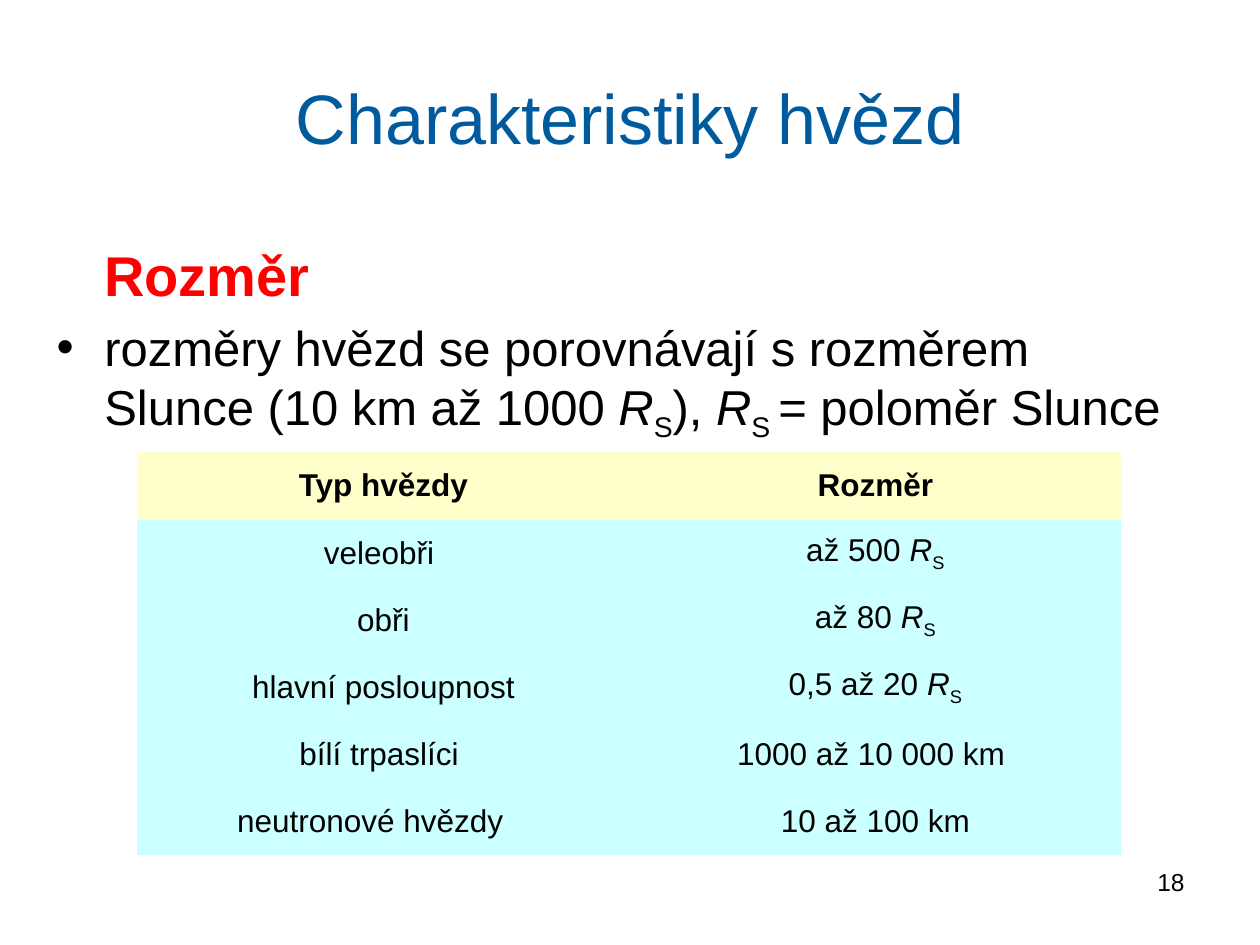
"""Build the slide on star sizes: title, bulleted text and a table."""
from dataclasses import dataclass

from lxml import etree
from pptx import Presentation
from pptx import util as u
from pptx.dml.color import RGBColor
from pptx.enum import text
from pptx.oxml import ns

FONT = "Arial"
COLORS = {
    "title": "005A9E",
    "heading": "FF0000",
    "body": "000000",
    "header_row": "FFFFCC",
    "data_row": "CCFFFF",
}
NO_STYLE = "{2D5ABB26-0587-4C30-8999-92F81FD0307C}"
NBSP_WIDTH = 0.07
CELL_MARGIN = 0.05
HANGING = 0.38


@dataclass(frozen=True)
class StarType:
    name: str
    size: str
    in_solar_radii: bool = False
    name_shift: int = 0
    size_shift: int = 0


STAR_TYPES = [
    StarType("veleobři", "až 500 ", in_solar_radii=True, name_shift=1),
    StarType("obři", "až 80 ", in_solar_radii=True),
    StarType("hlavní posloupnost", "0,5 až 20 ", in_solar_radii=True),
    StarType("bílí trpaslíci", "1000 až 10 000 km", name_shift=1, size_shift=1),
    StarType("neutronové hvězdy", "10 až 100 km", name_shift=3),
]


def add_span(para, content: str, *, size: float, color: str = "body", bold: bool = False,
             italic: bool = False, subscript: bool = False) -> None:
    """Append formatted text to a paragraph."""
    span = para.add_run()
    span.text = content
    font = span.font
    font.name, font.size = FONT, u.Pt(size)
    font.bold, font.italic = bold, italic
    font.color.rgb = RGBColor.from_string(COLORS[color])
    if subscript:
        span._r.get_or_add_rPr().set("baseline", "-25000")


def add_solar_radius(para, size: float, tail: str = "") -> None:
    """Append the symbol of the solar radius."""
    add_span(para, "R", size=size, italic=True)
    add_span(para, "S" + tail, size=size, subscript=True)


def add_box(page, left: float, top: float, width: float, height: float,
            anchor=text.MSO_ANCHOR.TOP, align=text.PP_ALIGN.LEFT):
    """Add a wrapping text box and return its text frame."""
    box = page.shapes.add_textbox(u.Inches(left), u.Inches(top), u.Inches(width), u.Inches(height))
    frame = box.text_frame
    frame.word_wrap = True
    frame.vertical_anchor = anchor
    frame.paragraphs[0].alignment = align
    return frame


def set_indent(para, first_line: float, bullet: str = "") -> None:
    """Indent a paragraph and give it an optional bullet."""
    properties = para._p.get_or_add_pPr()
    properties.set("marL", str(u.Inches(HANGING)))
    properties.set("indent", str(u.Inches(first_line)))
    if bullet:
        etree.SubElement(properties, ns.qn("a:buFont")).set("typeface", FONT)
        etree.SubElement(properties, ns.qn("a:buChar")).set("char", bullet)


def format_cell(cell, fill: str, shift: int = 0):
    """Fill and centre a cell, and return its paragraph."""
    cell.fill.solid()
    cell.fill.fore_color.rgb = RGBColor.from_string(COLORS[fill])
    cell.vertical_anchor = text.MSO_ANCHOR.MIDDLE
    cell.margin_left = cell.margin_top = cell.margin_bottom = u.Inches(CELL_MARGIN)
    cell.margin_right = u.Inches(CELL_MARGIN + shift * NBSP_WIDTH)
    para = cell.text_frame.paragraphs[0]
    para.alignment = text.PP_ALIGN.CENTER
    return para


def add_body(page) -> None:
    """Add the heading and the bulleted sentence."""
    frame = add_box(page, 0.35, 1.86, 9.11, 1.7)
    heading = frame.paragraphs[0]
    set_indent(heading, 0)
    add_span(heading, "Rozměr", size=32, color="heading", bold=True)
    para = frame.add_paragraph()
    para.space_before = u.Pt(5.6)
    set_indent(para, -HANGING, bullet="•")
    add_span(para, "rozměry hvězd se porovnávají s rozměrem Slunce (10 km až 1000 ", size=28)
    add_solar_radius(para, 28)
    add_span(para, "), ", size=28)
    add_solar_radius(para, 28, tail=" ")
    add_span(para, "= poloměr Slunce", size=28)


def add_star_table(page) -> None:
    """Add the table of star types and sizes."""
    rows = len(STAR_TYPES) + 1
    table = page.shapes.add_table(rows, 2, u.Inches(1.09), u.Inches(3.59),
                                  u.Inches(7.81), u.Inches(3.2)).table
    table.first_row = table.horz_banding = False
    table._tbl.tblPr.find(ns.qn("a:tableStyleId")).text = NO_STYLE
    for column, label in enumerate(("Typ hvězdy", "Rozměr")):
        para = format_cell(table.cell(0, column), "header_row")
        add_span(para, label, size=18, bold=True)
    for row, star in enumerate(STAR_TYPES, start=1):
        name = format_cell(table.cell(row, 0), "data_row", star.name_shift)
        add_span(name, star.name, size=18)
        size = format_cell(table.cell(row, 1), "data_row", star.size_shift)
        add_span(size, star.size, size=18)
        if star.in_solar_radii:
            add_solar_radius(size, 18)


def main() -> None:
    """Create the deck and save it."""
    deck = Presentation()
    deck.slide_width, deck.slide_height = u.Inches(10), u.Inches(7.5)
    page = deck.slides.add_slide(deck.slide_layouts[6])
    title = add_box(page, 0.5, 0.3, 9, 1.25, text.MSO_ANCHOR.MIDDLE, text.PP_ALIGN.CENTER)
    add_span(title.paragraphs[0], "Charakteristiky hvězd", size=40, color="title")
    number = add_box(page, 7.17, 6.83, 2.33, 0.52, align=text.PP_ALIGN.RIGHT)
    add_span(number.paragraphs[0], "18", size=14)
    add_body(page)
    add_star_table(page)
    deck.save("out.pptx")


if __name__ == "__main__":
    main()
